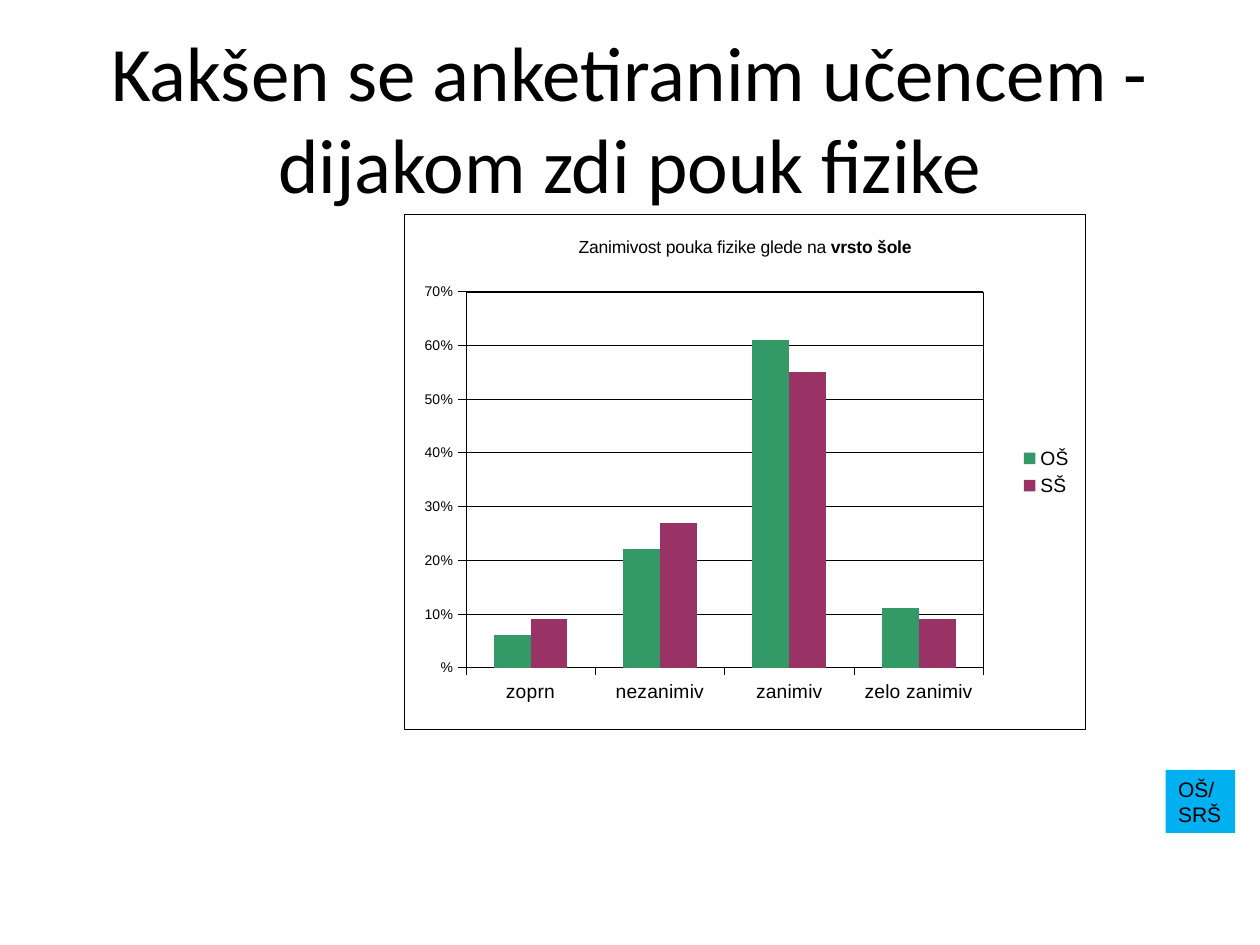
from dataclasses import dataclass

from lxml import etree
from pptx import Presentation
from pptx.chart.data import CategoryChartData
from pptx.dml.color import RGBColor
from pptx.enum.chart import XL_CHART_TYPE, XL_LEGEND_POSITION, XL_TICK_MARK
from pptx.enum.shapes import MSO_SHAPE
from pptx.enum.text import MSO_ANCHOR, PP_ALIGN
from pptx.oxml import parse_xml
from pptx.oxml.ns import nsdecls, qn
from pptx.util import Cm, Pt


@dataclass(frozen=True)
class Theme:
    ink: str = "000000"
    paper: str = "FFFFFF"
    primary: str = "339966"
    secondary: str = "993366"
    badge: str = "00B0F0"
    heading_font: str = "Calibri"
    body_font: str = "Arial"
    heading_size: float = 44
    badge_size: float = 12
    label_size: float = 11
    chart_title_size: float = 10
    scale_size: float = 8
    hairline: float = 0.25


THEME = Theme()
CATEGORIES = ["zoprn", "nezanimiv", "zanimiv", "zelo zanimiv"]
SERIES = [
    ("OŠ", [0.06, 0.22, 0.61, 0.11], THEME.primary),
    ("SŠ", [0.09, 0.27, 0.55, 0.09], THEME.secondary),
]
PLOT_LAYOUT = {"x": 0.09, "y": 0.15, "w": 0.76, "h": 0.73}


def style_font(font, size, name=THEME.body_font, bold=False):
    for key, value in {"name": name, "size": Pt(size), "bold": bold}.items():
        setattr(font, key, value)
    font.color.rgb = RGBColor.from_string(THEME.ink)


def style_line(line):
    line.color.rgb = RGBColor.from_string(THEME.ink)
    line.width = Pt(THEME.hairline)


def frame_xml(fill):
    """Return chart shape properties with the given fill and a thin outline."""
    return parse_xml(
        f'<c:spPr {nsdecls("c", "a")}>{fill}<a:ln w="{Pt(THEME.hairline)}">'
        f'<a:solidFill><a:srgbClr val="{THEME.ink}"/></a:solidFill></a:ln></c:spPr>'
    )


def add_heading(page, box):
    frame = page.shapes.add_textbox(*box).text_frame
    for key, value in {"word_wrap": True, "vertical_anchor": MSO_ANCHOR.MIDDLE}.items():
        setattr(frame, key, value)
    para = frame.paragraphs[0]
    para.alignment = PP_ALIGN.CENTER
    span = para.add_run()
    span.text = "Kakšen se anketiranim učencem - dijakom zdi pouk fizike"
    style_font(span.font, THEME.heading_size, THEME.heading_font)


def frame_chart(chart):
    """Outline the chart and its plot, and fix the inner plot position."""
    chart_node = chart._chartSpace.find(qn("c:chart"))
    paper = f'<a:solidFill><a:srgbClr val="{THEME.paper}"/></a:solidFill>'
    chart_node.addnext(frame_xml(paper))
    plot_area = chart_node.find(qn("c:plotArea"))
    for old_layout in plot_area.findall(qn("c:layout")):
        plot_area.remove(old_layout)
    layout = etree.Element(qn("c:layout"))
    manual = etree.SubElement(layout, qn("c:manualLayout"))
    settings = {"layoutTarget": "inner", "xMode": "edge", "yMode": "edge", **PLOT_LAYOUT}
    for tag, value in settings.items():
        etree.SubElement(manual, qn(f"c:{tag}")).set("val", str(value))
    plot_area.insert(0, layout)
    plot_area.append(frame_xml("<a:noFill/>"))


def add_survey_chart(page, box):
    data = CategoryChartData(number_format="####%")
    data.categories = CATEGORIES
    for name, values, _ in SERIES:
        data.add_series(name, values)
    chart = page.shapes.add_chart(XL_CHART_TYPE.COLUMN_CLUSTERED, *box, data).chart
    style_font(chart.font, THEME.label_size)

    para = chart.chart_title.text_frame.paragraphs[0]
    for text, bold in (("Zanimivost pouka fizike glede na ", False), ("vrsto šole", True)):
        span = para.add_run()
        span.text = text
        style_font(span.font, THEME.chart_title_size, bold=bold)
    chart.chart_title.include_in_layout = False

    chart.has_legend = True
    chart.legend.position = XL_LEGEND_POSITION.RIGHT
    chart.legend.include_in_layout = False
    style_font(chart.legend.font, THEME.label_size)

    plot = chart.plots[0]
    for key, value in {"gap_width": 150, "overlap": 0, "vary_by_categories": False}.items():
        setattr(plot, key, value)
    for series, (_, _, color) in zip(plot.series, SERIES):
        series.format.fill.solid()
        series.format.fill.fore_color.rgb = RGBColor.from_string(color)

    axes = ((chart.category_axis, THEME.label_size), (chart.value_axis, THEME.scale_size))
    for axis, size in axes:
        style_font(axis.tick_labels.font, size)
        style_line(axis.format.line)
        axis.major_tick_mark = XL_TICK_MARK.OUTSIDE
    scale = chart.value_axis
    for key, value in {"minimum_scale": 0, "maximum_scale": 0.7, "major_unit": 0.1}.items():
        setattr(scale, key, value)
    scale.tick_labels.number_format = "####%"
    scale.tick_labels.number_format_is_linked = False
    style_line(scale.major_gridlines.format.line)
    frame_chart(chart)


def add_school_badge(page, box):
    badge = page.shapes.add_shape(MSO_SHAPE.RECTANGLE, *box)
    badge.shadow.inherit = False
    badge.fill.solid()
    badge.fill.fore_color.rgb = RGBColor.from_string(THEME.badge)
    badge.line.fill.background()
    frame = badge.text_frame
    for key, value in {"word_wrap": True, "vertical_anchor": MSO_ANCHOR.TOP}.items():
        setattr(frame, key, value)
    para = frame.paragraphs[0]
    para.alignment = PP_ALIGN.LEFT
    span = para.add_run()
    span.text = "OŠ/SRŠ"
    style_font(span.font, THEME.badge_size)


def main():
    deck = Presentation()
    deck.slide_width, deck.slide_height = Cm(25.4), Cm(19.05)
    page = deck.slides.add_slide(deck.slide_layouts[6])
    add_heading(page, (Cm(1.27), Cm(0.76), Cm(22.86), Cm(3.18)))
    add_survey_chart(page, (Cm(8.15), Cm(4.32), Cm(13.74), Cm(10.39)))
    add_school_badge(page, (Cm(23.5), Cm(15.52), Cm(1.4), Cm(1.27)))
    deck.save("out.pptx")


if __name__ == "__main__":
    main()
